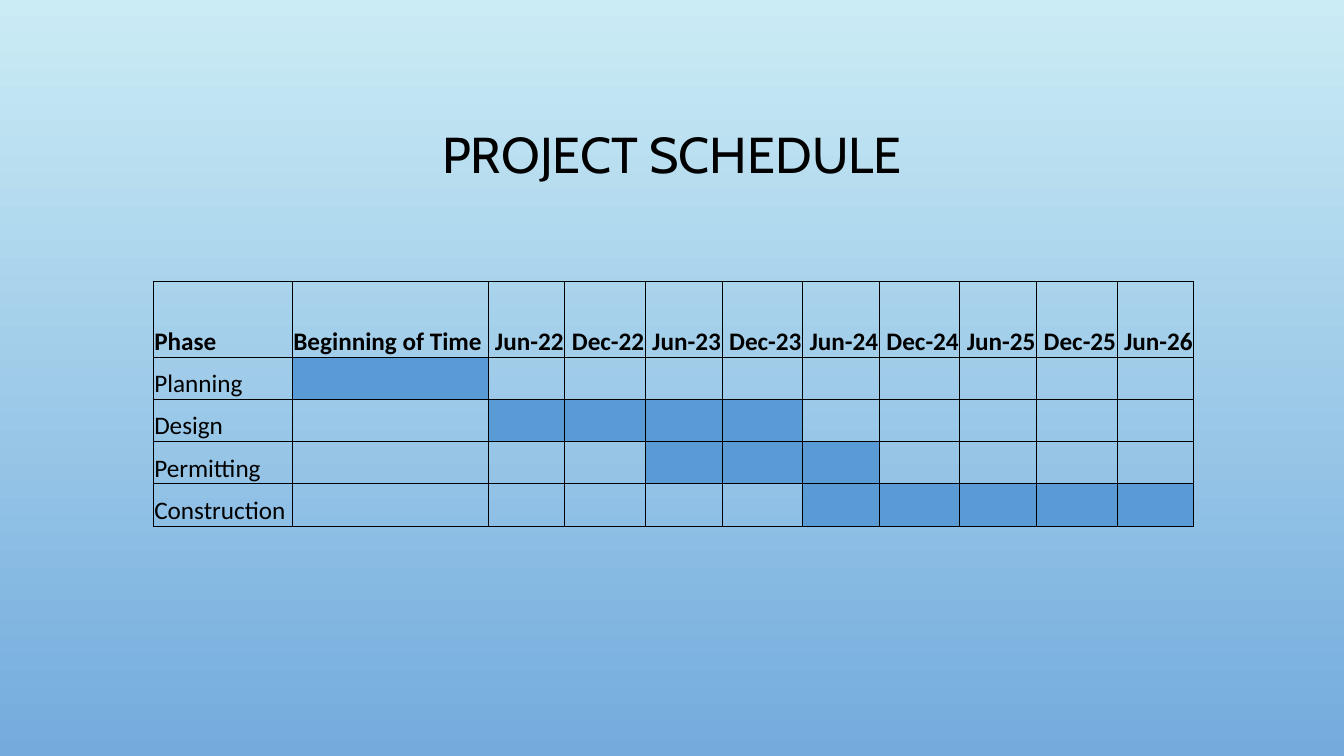
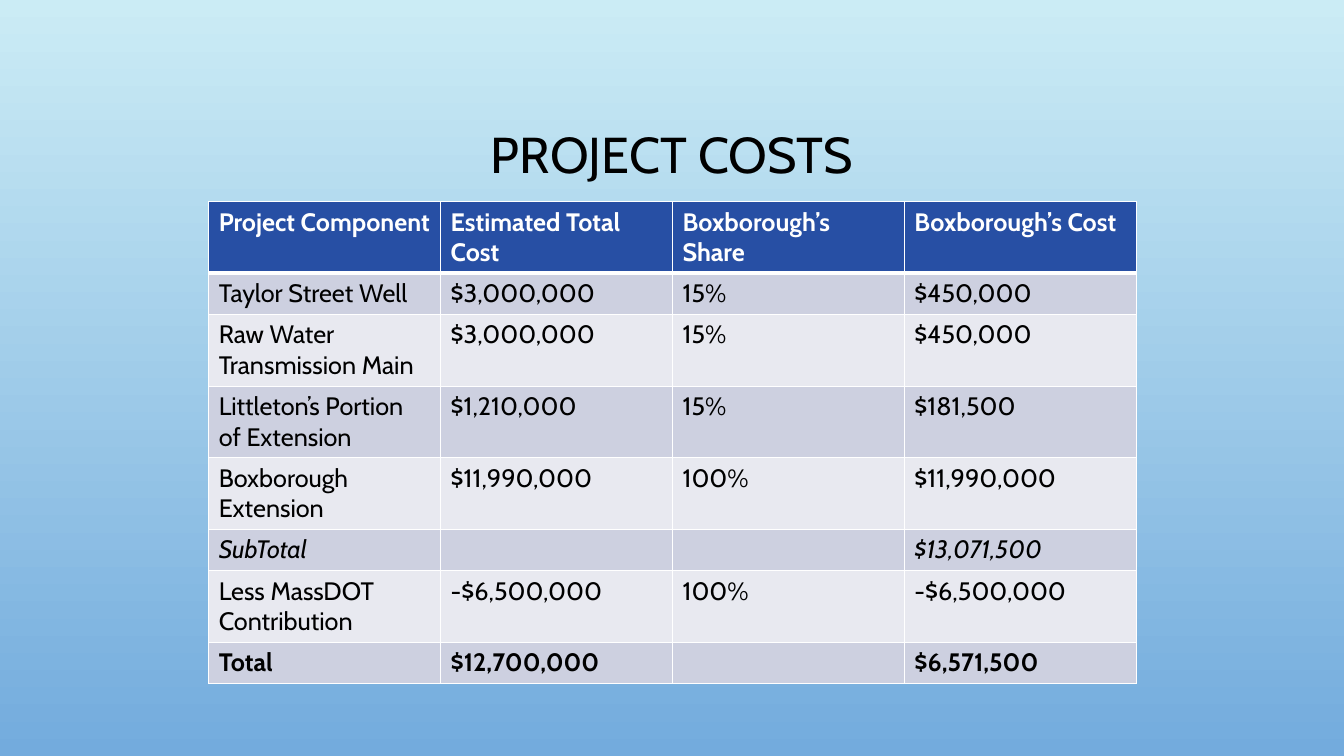
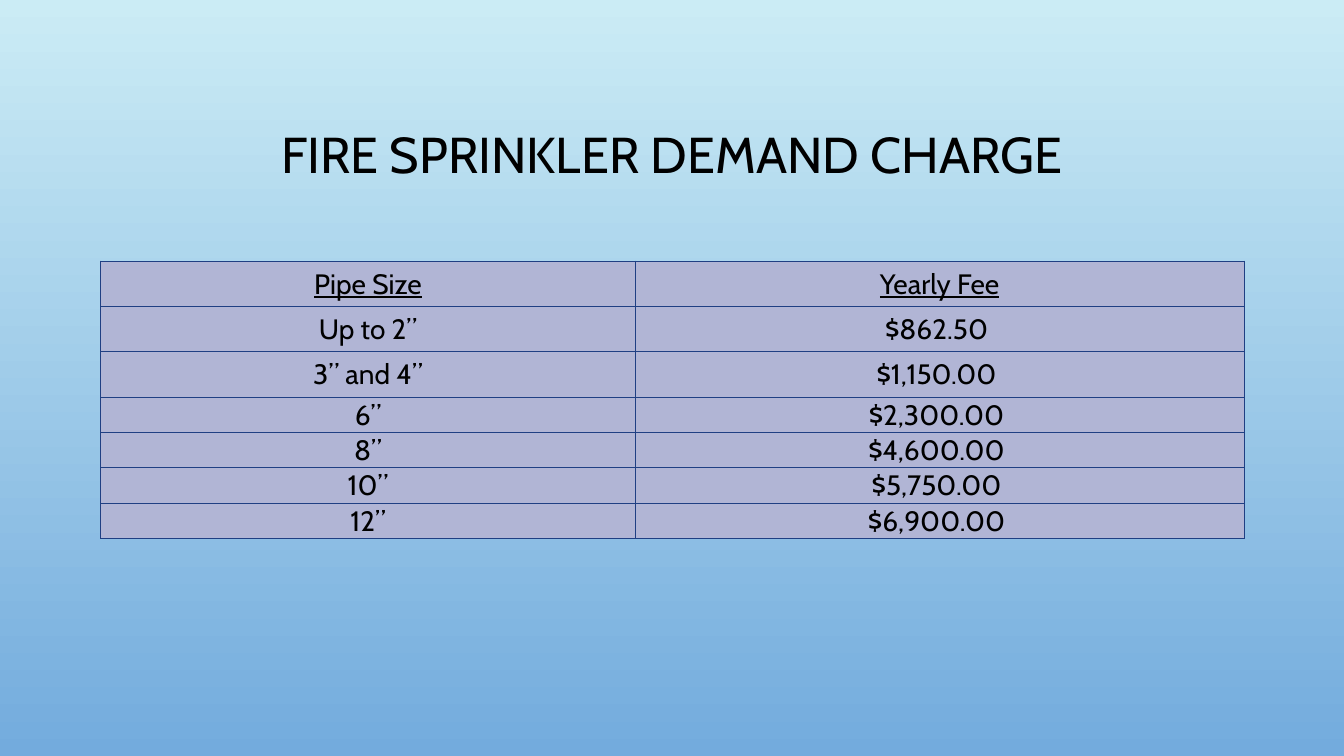
from pptx import Presentation
from pptx.dml.color import RGBColor
from pptx.enum.text import MSO_ANCHOR as Anchor, PP_ALIGN as Align
from pptx.oxml import parse_xml
from pptx.oxml.ns import nsdecls
from pptx.util import Inches, Pt

BLACK = RGBColor(0x00, 0x00, 0x00)
WHITE = RGBColor(0xFF, 0xFF, 0xFF)
SKY_TOP = RGBColor(0xCB, 0xEC, 0xF5)
SKY_BOTTOM = RGBColor(0x73, 0xAB, 0xDD)
ACTIVE_BLUE = RGBColor(0x5B, 0x9B, 0xD5)
HEADER_BLUE = RGBColor(0x27, 0x4F, 0xA4)
BAND_DARK = RGBColor(0xCD, 0xD0, 0xE0)
BAND_LIGHT = RGBColor(0xE8, 0xE9, 0xF0)
FEE_FILL = RGBColor(0xB1, 0xB5, 0xD5)
FEE_LINE = RGBColor(0x1F, 0x3F, 0x83)
PLAIN_TABLE_STYLE = "{2D5ABB26-0587-4C30-8999-92F81FD0307C}"

deck = Presentation()
deck.slide_width, deck.slide_height = Inches(13.33), Inches(7.5)

# Shared background
sky = deck.slide_master.background.fill
sky.gradient()
sky.gradient_angle = 270
for stop, color in zip(sky.gradient_stops, (SKY_TOP, SKY_BOTTOM)):
    stop.color.rgb = color


def add_table_page(title, left, top, columns, heights):
    """Add a titled page with an unstyled table and return the table."""
    page = deck.slides.add_slide(deck.slide_layouts.get_by_name("Title Only"))
    box = page.shapes.title
    box.left, box.top, box.width, box.height = map(Inches, (1, 0.68, 11.33, 1.75))
    box.text_frame.text = title
    box.text_frame.vertical_anchor = Anchor.MIDDLE
    para = box.text_frame.paragraphs[0]
    para.alignment = Align.CENTER
    para.line_spacing = 0.9
    para.font.name, para.font.size = "Cabin", Pt(36)
    para.font.color.rgb = BLACK

    frame = page.shapes.add_table(
        len(heights), len(columns), Inches(left), Inches(top),
        Inches(sum(columns)), Inches(sum(heights)))
    table = frame.table
    table.first_row = table.horz_banding = False
    table._tbl.tblPr.find("{*}tableStyleId").text = PLAIN_TABLE_STYLE
    for column, width in zip(table.columns, columns):
        column.width = Inches(width)
    for row, height in zip(table.rows, heights):
        row.height = Inches(height)
    return table


def format_cell(cell, text, font, line, widths, fill=None, align=Align.LEFT,
                anchor=Anchor.TOP, margins=(0.1, 0.05, 0.1, 0.05)):
    """Write one cell; widths are the left, right, top and bottom lines in points."""
    cell.text = text
    cell.vertical_anchor = anchor
    sides = ("margin_left", "margin_top", "margin_right", "margin_bottom")
    for side, margin in zip(sides, margins):
        setattr(cell, side, Inches(margin))
    para = cell.text_frame.paragraphs[0]
    para.alignment = align
    for name, value in font.items():
        if name == "color":
            para.font.color.rgb = value
        else:
            setattr(para.font, name, value)
    properties = cell._tc.get_or_add_tcPr()
    for edge, width in zip("LRTB", widths):
        properties.append(parse_xml(
            f'<a:ln{edge} {nsdecls("a")} w="{Pt(width)}"><a:solidFill>'
            f'<a:srgbClr val="{line}"/></a:solidFill></a:ln{edge}>'))
    if fill is None:
        cell.fill.background()
    else:
        cell.fill.solid()
        cell.fill.fore_color.rgb = fill


# Project schedule: phase, first and last active column
dates = ["Jun-22", "Dec-22", "Jun-23", "Dec-23", "Jun-24",
         "Dec-24", "Jun-25", "Dec-25", "Jun-26"]
phases = [("Planning", 1, 1), ("Design", 2, 5), ("Permitting", 4, 6),
          ("Construction", 6, 10)]
headings = ["Phase", "Beginning of Time"] + dates
date_widths = [0.76 if date.startswith("Jun") else 0.8 for date in dates]
table = add_table_page("PROJECT SCHEDULE", 1.52, 2.79,
                       [1.38, 1.94] + date_widths, [0.75] + [0.42] * len(phases))
schedule_font = {"name": "Calibri", "size": Pt(18), "color": BLACK}
schedule_look = {"line": BLACK, "widths": [0.5] * 4, "anchor": Anchor.BOTTOM,
                 "margins": (0.01, 0.01, 0.01, 0)}
for c, heading in enumerate(headings):
    format_cell(table.cell(0, c), heading, {**schedule_font, "bold": True},
                align=Align.RIGHT if c > 1 else Align.LEFT, **schedule_look)
for r, (phase, first, last) in enumerate(phases, 1):
    for c in range(len(headings)):
        format_cell(table.cell(r, c), "" if c else phase, schedule_font,
                    fill=ACTIVE_BLUE if first <= c <= last else None,
                    **schedule_look)

# Project costs
costs = [
    ("Project Component", "Estimated Total Cost", "Boxborough’s Share", "Boxborough’s Cost"),
    ("Taylor Street Well", "$3,000,000", "15%", "$450,000"),
    ("Raw Water Transmission Main", "$3,000,000", "15%", "$450,000"),
    ("Littleton’s Portion of Extension", "$1,210,000", "15%", "$181,500"),
    ("Boxborough Extension", "$11,990,000", "100%", "$11,990,000"),
    ("SubTotal", "", "", "$13,071,500"),
    ("Less MassDOT Contribution", "-$6,500,000", "100%", "-$6,500,000"),
    ("Total", "$12,700,000", "", "$6,571,500"),
]
one_line, two_lines = 0.41, 0.71
table = add_table_page(
    "PROJECT COSTS", 2.07, 2, [2.3] * 4,
    [one_line if row[0] in ("Taylor Street Well", "SubTotal", "Total") else two_lines
     for row in costs])
for r, row in enumerate(costs):
    font = {"name": "Cabin", "size": Pt(18), "color": BLACK if r else WHITE,
            "bold": row[0] == "Total" or r == 0, "italic": row[0] == "SubTotal"}
    fill = (BAND_DARK if r % 2 else BAND_LIGHT) if r else HEADER_BLUE
    widths = (1, 1, 3 if r == 1 else 1, 3 if r == 0 else 1)
    for c, text in enumerate(row):
        format_cell(table.cell(r, c), text, font, WHITE, widths, fill)

# Fire sprinkler demand charge
fees = [("Pipe Size", "Yearly Fee"), ("Up to 2”", "$862.50 "),
        ("3” and 4”", "$1,150.00 "), ("6”", "$2,300.00 "), ("8”", "$4,600.00 "),
        ("10”", "$5,750.00 "), ("12”", "$6,900.00 ")]
table = add_table_page("FIRE SPRINKLER DEMAND CHARGE", 1, 2.59, [5.3, 6.04],
                       [0.45] * 3 + [0.35] * 4)
for r, row in enumerate(fees):
    font = {"name": "Cabin", "size": Pt(20), "color": BLACK, "underline": r == 0}
    for c, text in enumerate(row):
        format_cell(table.cell(r, c), text, font, FEE_LINE, [0.75] * 4, FEE_FILL,
                    Align.CENTER, Anchor.MIDDLE, (0.05, 0.01, 0.05, 0))

deck.save("out.pptx")
